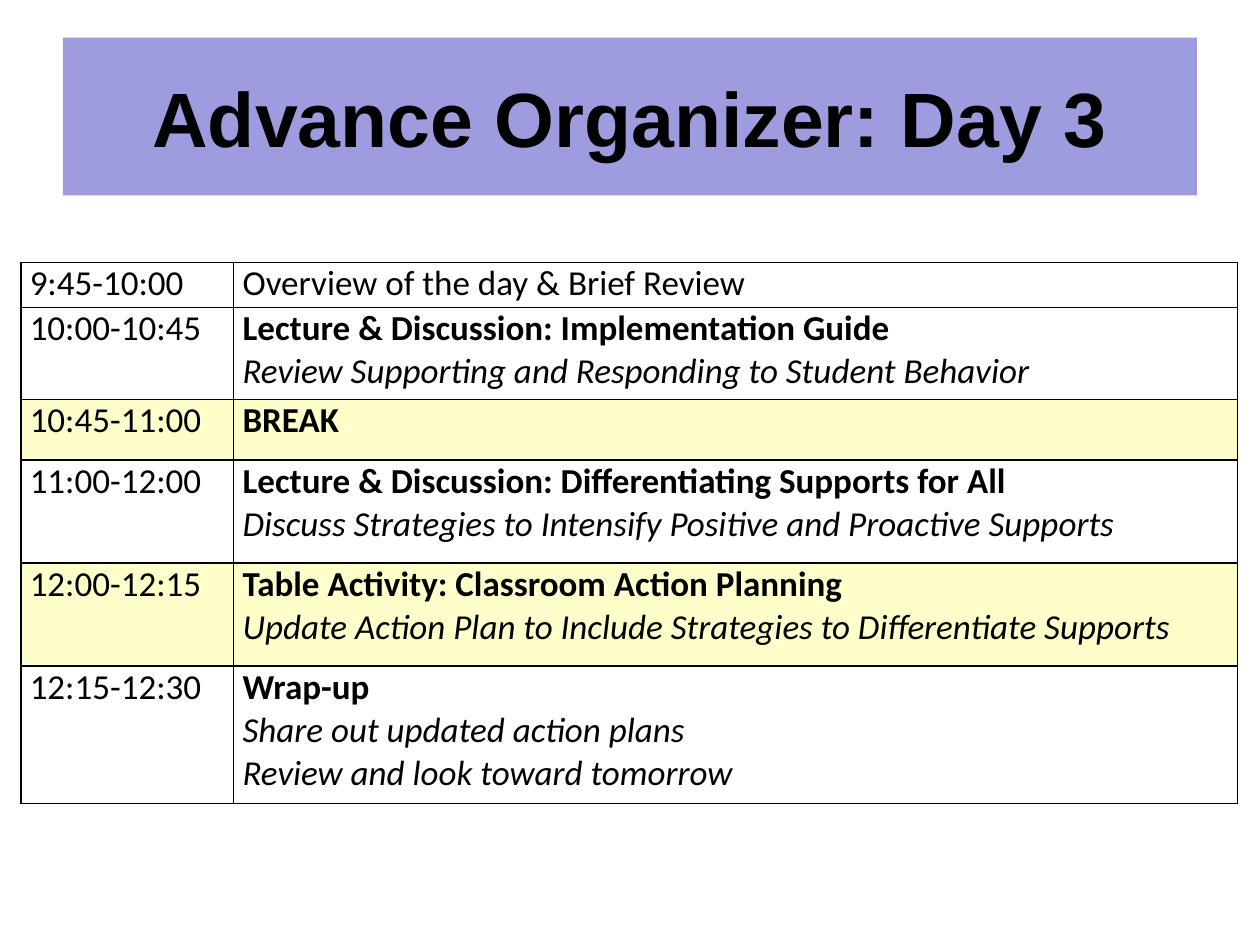
from dataclasses import dataclass

from lxml import etree
from pptx import Presentation
from pptx.dml.color import RGBColor
from pptx.enum.shapes import MSO_SHAPE
from pptx.enum.text import MSO_ANCHOR, PP_ALIGN
from pptx.oxml.ns import qn
from pptx.util import Cm, Pt

RECT = MSO_SHAPE.RECTANGLE
MIDDLE = MSO_ANCHOR.MIDDLE
CENTER = PP_ALIGN.CENTER

COLORS = {"banner": "9C9CDF", "highlight": "FFFFCC", "ink": "000000"}
COLUMN_WIDTHS = (4.29, 20.24)  # cm


@dataclass
class Session:
    time: str
    height: float  # cm
    heading: str
    details: tuple[str, ...] = ()
    bold: bool = True
    highlighted: bool = False


SESSIONS = [
    Session("9:45-10:00", 0.91, "Overview of the day & Brief Review", bold=False),
    Session("10:00-10:45", 1.85, "Lecture & Discussion: Implementation Guide",
            ("Review Supporting and Responding to Student Behavior",)),
    Session("10:45-11:00", 1.22, "BREAK", highlighted=True),
    Session("11:00-12:00", 2.08, "Lecture & Discussion: Differentiating Supports for All",
            ("Discuss Strategies to Intensify Positive and Proactive Supports",)),
    Session("12:00-12:15", 2.08, "Table Activity: Classroom Action Planning",
            ("Update Action Plan to Include Strategies to Differentiate Supports",),
            highlighted=True),
    Session("12:15-12:30", 2.77, "Wrap-up",
            ("Share out updated action plans", "Review and look toward tomorrow")),
]


def rgb(name: str) -> RGBColor:
    return RGBColor.from_string(COLORS[name])


def write(p, text: str, font: str, size: float, bold=False, italic=False) -> None:
    p.text = text
    p.font.name = font
    p.font.size = Pt(size)
    p.font.bold = bold
    p.font.italic = italic
    p.font.color.rgb = rgb("ink")


def add_borders(cell) -> None:
    """Draw a 1 pt line on each side; lines must come before the fill."""
    tc_pr = cell._tc.get_or_add_tcPr()
    for i, side in enumerate(("a:lnL", "a:lnR", "a:lnT", "a:lnB")):
        ln = etree.Element(qn(side), w=str(Pt(1)))
        fill = etree.SubElement(ln, qn("a:solidFill"))
        etree.SubElement(fill, qn("a:srgbClr"), val=COLORS["ink"])
        tc_pr.insert(i, ln)


def style_cell(cell, highlighted: bool) -> None:
    cell.margin_left = cell.margin_right = Cm(0.18)
    cell.margin_top = cell.margin_bottom = 0
    if highlighted:
        cell.fill.solid()
        cell.fill.fore_color.rgb = rgb("highlight")
    else:
        cell.fill.background()
    add_borders(cell)


def add_banner(s, text: str) -> None:
    sp = s.shapes.add_shape(RECT, Cm(1.27), Cm(0.76), Cm(22.86), Cm(3.18))
    sp.shadow.inherit = False
    sp.fill.solid()
    sp.fill.fore_color.rgb = rgb("banner")
    sp.line.fill.background()
    tf = sp.text_frame
    tf.word_wrap = True
    tf.vertical_anchor = MIDDLE
    p = tf.paragraphs[0]
    p.alignment = CENTER
    write(p, text, "Arial", 44, bold=True)


def add_schedule(s, sessions: list[Session]) -> None:
    table = s.shapes.add_table(
        len(sessions), len(COLUMN_WIDTHS), Cm(0.42), Cm(5.29),
        Cm(sum(COLUMN_WIDTHS)), Cm(sum(x.height for x in sessions))).table
    table.first_row = table.horz_banding = False
    for column, width in zip(table.columns, COLUMN_WIDTHS):
        column.width = Cm(width)
    for row, session in zip(table.rows, sessions):
        row.height = Cm(session.height)
        time, topic = row.cells
        for cell in (time, topic):
            style_cell(cell, session.highlighted)
        write(time.text_frame.paragraphs[0], session.time, "Calibri", 20)
        tf = topic.text_frame
        write(tf.paragraphs[0], session.heading, "Calibri", 20, bold=session.bold)
        for detail in session.details:
            write(tf.add_paragraph(), detail, "Calibri", 20, italic=True)


def main() -> None:
    prs = Presentation()
    prs.slide_width, prs.slide_height = Cm(25.4), Cm(19.05)
    s = prs.slides.add_slide(prs.slide_layouts[6])
    # Title banner
    add_banner(s, "Advance Organizer: Day 3")
    # Timetable of the day
    add_schedule(s, SESSIONS)
    prs.save("out.pptx")


if __name__ == "__main__":
    main()
